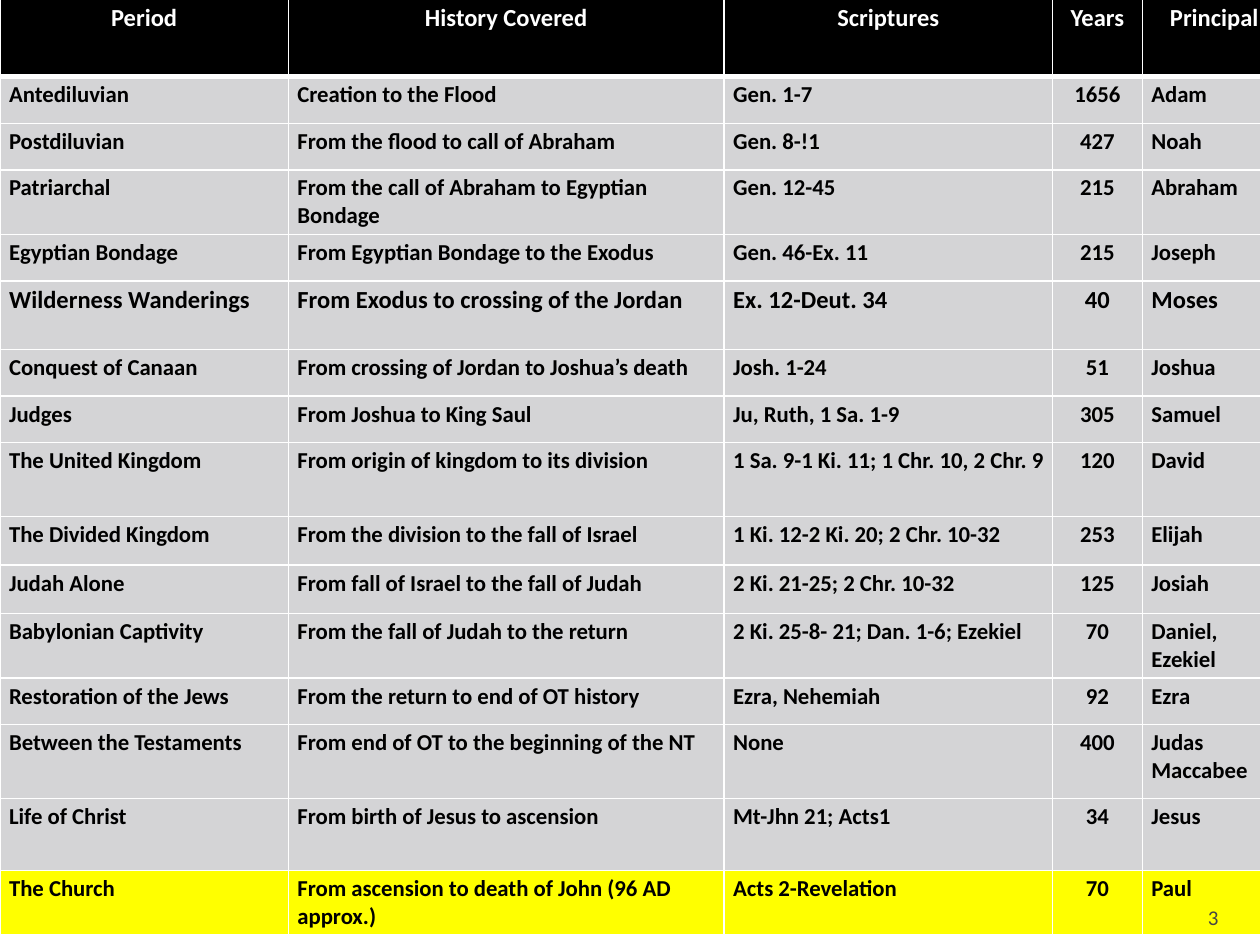
import dataclasses
import typing

import lxml.etree
import pptx
import pptx.dml.color
import pptx.enum.text
import pptx.oxml.ns
import pptx.util

Pt = pptx.util.Pt
Align = pptx.enum.text.PP_ALIGN
Anchor = pptx.enum.text.MSO_ANCHOR


@dataclasses.dataclass(frozen=True)
class Theme:
    font: str = "Calibri"
    header_fill: str = "000000"
    body_fill: str = "D4D4D6"
    highlight_fill: str = "FFFF00"
    light: str = "FFFFFF"
    dark: str = "000000"
    number_color: str = "454545"
    large: float = 14
    body: float = 13
    small: float = 12
    thin_border: float = 1
    thick_border: float = 3


THEME = Theme()


class Column(typing.NamedTuple):
    title: str
    width: float
    alignment: Align = Align.LEFT


class Period(typing.NamedTuple):
    name: str
    history: str
    scriptures: str
    years: str
    principal: str
    height: float = 26.6
    size: float = THEME.body
    fill: str = THEME.body_fill


HEADER_HEIGHT = 44.6
COLUMNS = [
    Column("Period", 164.8),
    Column("History Covered", 249),
    Column("Scriptures", 187.7),
    Column("Years", 51.3, Align.CENTER),
    Column("Principal ", 85.5),
]
PERIODS = [
    Period("Antediluvian", "Creation to the Flood", "Gen. 1-7", "1656", "Adam"),
    Period("Postdiluvian", "From the flood to call of Abraham", "Gen. 8-!1", "427", "Noah"),
    Period("Patriarchal", "From the call of Abraham to Egyptian Bondage", "Gen. 12-45",
           "215", "Abraham", height=37),
    Period("Egyptian Bondage", "From Egyptian Bondage to the Exodus", "Gen. 46-Ex. 11",
           "215", "Joseph"),
    Period("Wilderness Wanderings", "From Exodus to crossing of the Jordan",
           "Ex. 12-Deut. 34", "40", "Moses", height=39, size=THEME.large),
    Period("Conquest of Canaan", "From crossing of Jordan to Joshua’s death",
           "Josh. 1-24", "51", "Joshua"),
    Period("Judges", "From Joshua to King Saul", "Ju, Ruth, 1 Sa. 1-9", "305", "Samuel"),
    Period("The United Kingdom", "From origin of kingdom to its division",
           "1 Sa. 9-1 Ki. 11; 1 Chr. 10, 2 Chr. 9", "120", "David", height=42.3),
    Period("The Divided Kingdom", "From the division to the fall of Israel",
           "1 Ki. 12-2 Ki. 20; 2 Chr. 10-32", "253", "Elijah", height=27.8),
    Period("Judah Alone", "From fall of Israel to the fall of Judah",
           "2 Ki. 21-25; 2 Chr. 10-32", "125", "Josiah", height=27.6),
    Period("Babylonian Captivity", "From the fall of Judah to the return",
           "2 Ki. 25-8- 21; Dan. 1-6; Ezekiel", "70", "Daniel, Ezekiel", height=37),
    Period("Restoration of the Jews", "From the return to end of OT history",
           "Ezra, Nehemiah", "92", "Ezra"),
    Period("Between the Testaments", "From end of OT to the beginning of the NT",
           "None", "400", "Judas Maccabee", height=42.3),
    Period("Life of Christ", "From birth of Jesus to ascension", "Mt-Jhn 21; Acts1",
           "34", "Jesus", height=41),
    Period("The Church", "From ascension to death of John (96 AD approx.)",
           "Acts 2-Revelation", "70", "Paul", height=37, fill=THEME.highlight_fill),
]


def write_text(text_frame, text: str, *, size: float, color: str,
               bold: bool = False, alignment: Align = Align.LEFT) -> None:
    paragraph = text_frame.paragraphs[0]
    paragraph.alignment = alignment
    run = paragraph.add_run()
    run.text = text
    run.font.name = THEME.font
    run.font.size = Pt(size)
    run.font.bold = bold
    run.font.color.rgb = pptx.dml.color.RGBColor.from_string(color)


def set_borders(cell, top: float, bottom: float) -> None:
    properties = cell._tc.get_or_add_tcPr()
    widths = {"lnL": THEME.thin_border, "lnR": THEME.thin_border, "lnT": top, "lnB": bottom}
    for position, (side, width) in enumerate(widths.items()):
        line = lxml.etree.Element(pptx.oxml.ns.qn(f"a:{side}"), w=str(int(Pt(width))))
        fill = lxml.etree.SubElement(line, pptx.oxml.ns.qn("a:solidFill"))
        lxml.etree.SubElement(fill, pptx.oxml.ns.qn("a:srgbClr"), val=THEME.light)
        properties.insert(position, line)


def fill_cell(cell, text: str, *, fill: str, size: float, color: str, alignment: Align,
              top: float = THEME.thin_border, bottom: float = THEME.thin_border) -> None:
    cell.margin_left = cell.margin_right = Pt(5.2)
    cell.margin_top = cell.margin_bottom = Pt(2.6)
    cell.fill.solid()
    cell.fill.fore_color.rgb = pptx.dml.color.RGBColor.from_string(fill)
    set_borders(cell, top, bottom)
    write_text(cell.text_frame, text, size=size, color=color, bold=True, alignment=alignment)


def draw_periods_table(slide) -> None:
    heights = [HEADER_HEIGHT] + [period.height for period in PERIODS]
    table = slide.shapes.add_table(
        len(heights), len(COLUMNS), Pt(0), Pt(-0.7),
        Pt(sum(column.width for column in COLUMNS)), Pt(sum(heights))).table
    for row, height in zip(table.rows, heights):
        row.height = Pt(height)
    for column_index, column in enumerate(COLUMNS):
        table.columns[column_index].width = Pt(column.width)
        fill_cell(table.cell(0, column_index), column.title, fill=THEME.header_fill,
                  size=THEME.large, color=THEME.light, alignment=Align.CENTER,
                  bottom=THEME.thick_border)
        for row_index, period in enumerate(PERIODS, start=1):
            fill_cell(table.cell(row_index, column_index), period[column_index],
                      fill=period.fill, size=period.size, color=THEME.dark,
                      alignment=column.alignment,
                      top=THEME.thick_border if row_index == 1 else THEME.thin_border)


def draw_slide_number(slide, number: str) -> None:
    text_frame = slide.shapes.add_textbox(Pt(645.8), Pt(509.8), Pt(57.6), Pt(21.6)).text_frame
    text_frame.word_wrap = True
    text_frame.vertical_anchor = Anchor.BOTTOM
    text_frame.margin_bottom = Pt(0)
    write_text(text_frame, number, size=THEME.small, color=THEME.number_color,
               alignment=Align.RIGHT)


def main() -> None:
    presentation = pptx.Presentation()
    presentation.slide_width = Pt(720)
    presentation.slide_height = Pt(540)
    slide = presentation.slides.add_slide(presentation.slide_layouts[6])
    draw_periods_table(slide)
    draw_slide_number(slide, "3")
    presentation.save("out.pptx")


if __name__ == "__main__":
    main()
